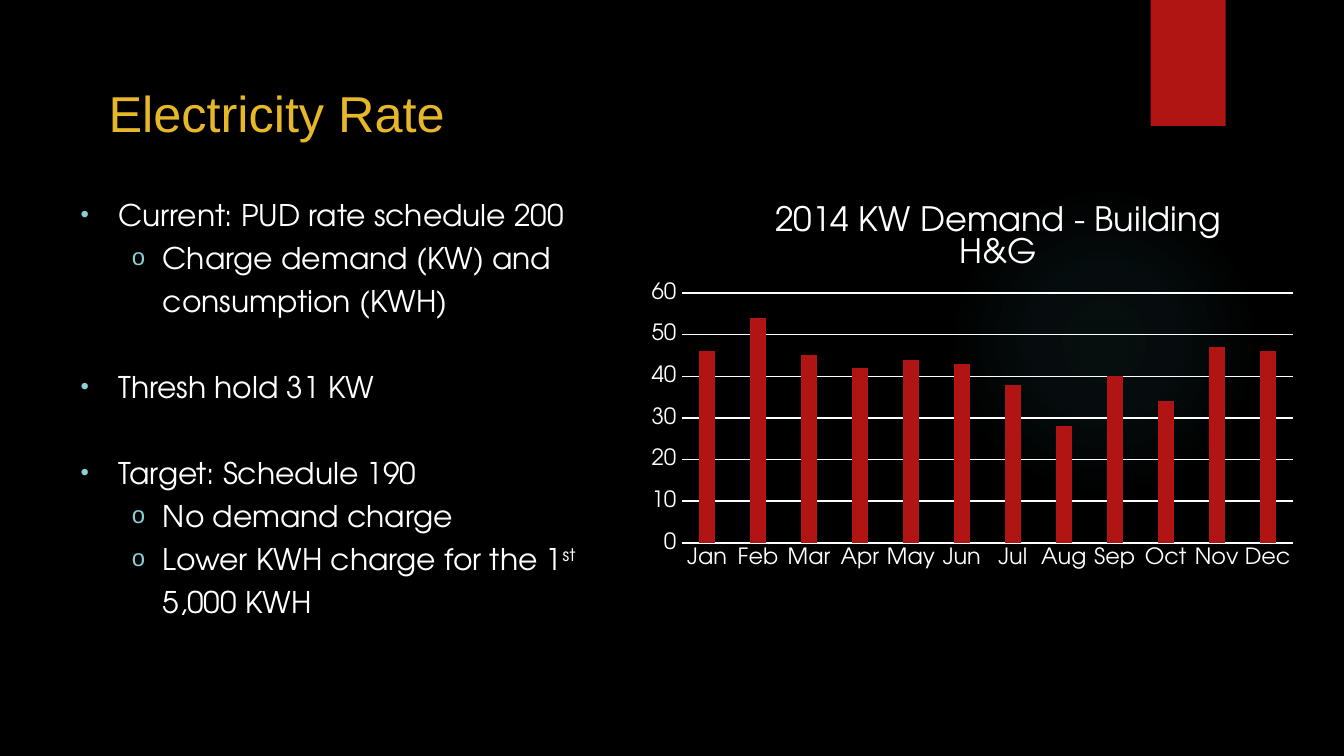
"""Build the Electricity Rate slide with its monthly demand chart."""
from lxml.etree import SubElement
from pptx import Presentation
from pptx.chart.data import CategoryChartData
from pptx.dml.color import RGBColor as RGB
from pptx.enum.chart import XL_CHART_TYPE as ChartType, XL_TICK_MARK as Tick
from pptx.enum.shapes import MSO_SHAPE as Preset
from pptx.enum.text import MSO_ANCHOR as Anchor, MSO_AUTO_SIZE as AutoSize, PP_ALIGN as Align
from pptx.oxml import parse_xml
from pptx.oxml.ns import nsdecls, qn
from pptx.util import Pt

TITLE = "Electricity Rate"
POINTS = [
    (0, False, ["Current: PUD rate schedule 200"]),
    (1, False, ["Charge demand (KW) and consumption (KWH)"]),
    (0, True, ["Thresh hold 31 KW"]),
    (0, True, ["Target: Schedule 190"]),
    (1, False, ["No demand charge"]),
    (1, False, ["Lower KWH charge for the 1", "st", " 5,000 KWH"]),
]
SUPERSCRIPT = "st"
CHART_TITLE = "2014 KW Demand - Building H&G"
DEMAND = {"Jan": 46, "Feb": 54, "Mar": 45, "Apr": 42, "May": 44, "Jun": 43,
          "Jul": 38, "Aug": 28, "Sep": 40, "Oct": 34, "Nov": 47, "Dec": 46}

THEME = {
    "background": RGB(0, 0, 0), "accent": RGB(0xB0, 0x15, 0x13),
    "heading": RGB(0xE6, 0xB7, 0x29), "text": RGB(255, 255, 255),
    "bullet": "8AD0D6", "glow": "50B9C1",
    "heading_font": "Arial", "body_font": "TeX Gyre Adventor",
    "heading_size": Pt(27), "body_size": Pt(16),
    "chart_title_size": Pt(18), "axis_size": Pt(12), "rule": Pt(0.75),
}
LEVELS = [{"marker": "•", "left": 20.25, "hang": -20.25},
          {"marker": "o", "left": 44, "hang": -16.5}]
GLOW_STOPS = [(0, 7), (36, 6), (69, 0)]
BOXES = {
    "glow": (508.3, 99.4, 166.3, 166.3), "ribbon": (616.4, 0, 40.3, 67.5),
    "title": (36, 16.6, 648, 67.7), "points": (36, 94.3, 296, 293),
    "chart": (340, 94.3, 360, 216),
}


def box(name):
    return [Pt(length) for length in BOXES[name]]


def apply(target, values):
    for name, value in values.items():
        setattr(target, name, value)


def style(font, size, color="text", face="body_font"):
    apply(font, {"name": THEME[face], "size": THEME[size], "bold": False})
    font.color.rgb = THEME[color]


def place(placeholder, name, anchor, indent=0):
    apply(placeholder, dict(zip(("left", "top", "width", "height"), box(name))))
    frame = placeholder.text_frame
    apply(frame, {"word_wrap": True, "auto_size": AutoSize.NONE, "vertical_anchor": anchor,
                  "margin_left": Pt(7.2 + indent), "margin_right": Pt(7.2),
                  "margin_top": Pt(7.2), "margin_bottom": Pt(7.2)})
    return frame


def add_backdrop(slide, preset, name, depth):
    shape = slide.shapes.add_shape(preset, *box(name))
    shape.shadow.inherit = False
    shape.line.fill.background()
    shape.fill.solid()
    shape.fill.fore_color.rgb = THEME["accent"]
    slide.shapes.element.insert(depth, shape.element)
    return shape


def fill_radial(shape):
    stops = "".join(
        f'<a:gs pos="{pos * 1000}"><a:srgbClr val="{THEME["glow"]}">'
        f'<a:alpha val="{alpha * 1000}"/></a:srgbClr></a:gs>' for pos, alpha in GLOW_STOPS)
    gradient = parse_xml(
        f'<a:gradFill {nsdecls("a")} rotWithShape="1"><a:gsLst>{stops}</a:gsLst>'
        '<a:path path="circle"><a:fillToRect l="50000" t="50000" r="50000" b="50000"/>'
        '</a:path></a:gradFill>')
    solid = shape.element.spPr.find(qn("a:solidFill"))
    solid.getparent().replace(solid, gradient)


def add_bullet(paragraph, marker, left, hang):
    properties = paragraph._p.get_or_add_pPr()
    properties.set("marL", str(Pt(left)))
    properties.set("indent", str(Pt(hang)))
    color = SubElement(properties, qn("a:buClr"))
    SubElement(color, qn("a:srgbClr"), val=THEME["bullet"])
    SubElement(properties, qn("a:buSzPct"), val="80000")
    SubElement(properties, qn("a:buChar"), char=marker)


def add_points(frame):
    for index, (level, new_group, pieces) in enumerate(POINTS):
        paragraph = frame.paragraphs[0] if index == 0 else frame.add_paragraph()
        add_bullet(paragraph, **LEVELS[level])
        apply(paragraph, {"level": level, "line_spacing": 1.2,
                          "space_before": Pt(23 if new_group else 0)})
        for piece in pieces:
            run = paragraph.add_run()
            run.text = piece
            style(run.font, "body_size")
            if piece == SUPERSCRIPT:
                run._r.get_or_add_rPr().set("baseline", "30000")


def set_layout(parent, index, **fractions):
    for old in parent.findall(qn("c:layout")):
        parent.remove(old)
    layout = parse_xml(f'<c:layout {nsdecls("c")}/>')
    manual = SubElement(layout, qn("c:manualLayout"))
    if "w" in fractions:
        SubElement(manual, qn("c:layoutTarget"), val="inner")
    for axis in "xy":
        SubElement(manual, qn(f"c:{axis}Mode"), val="edge")
    for name, value in fractions.items():
        SubElement(manual, qn(f"c:{name}"), val=str(value))
    parent.insert(index, layout)


def add_demand_chart(slide):
    data = CategoryChartData()
    data.categories = list(DEMAND)
    data.add_series("Series 1", list(DEMAND.values()))
    chart = slide.shapes.add_chart(ChartType.COLUMN_CLUSTERED, *box("chart"), data).chart
    style(chart.font, "axis_size")
    chart.has_legend = False
    heading = chart.chart_title.text_frame
    heading.text = CHART_TITLE
    style(heading.paragraphs[0].runs[0].font, "chart_title_size")
    set_layout(chart.chart_title._element, 1, x=0.2, y=0.05)
    set_layout(chart._chartSpace.chart.plotArea, 0, x=0.07, y=0.29, w=0.91, h=0.62)

    plot = chart.plots[0]
    apply(plot, {"gap_width": 219, "overlap": -27, "vary_by_categories": False})
    bars = plot.series[0].format.fill
    bars.solid()
    bars.fore_color.rgb = THEME["accent"]

    months, kilowatts = chart.category_axis, chart.value_axis
    for axis in (months, kilowatts):
        apply(axis, {"major_tick_mark": Tick.NONE, "minor_tick_mark": Tick.NONE})
        style(axis.tick_labels.font, "axis_size")
    apply(kilowatts, {"minimum_scale": 0, "maximum_scale": 60, "major_unit": 10,
                      "has_major_gridlines": True})
    kilowatts.format.line.fill.background()
    for line in (months.format.line, kilowatts.major_gridlines.format.line):
        line.color.rgb = THEME["text"]
        line.width = THEME["rule"]


def main():
    deck = Presentation()
    apply(deck, {"slide_width": Pt(720), "slide_height": Pt(405)})
    slide = deck.slides.add_slide(deck.slide_layouts[1])
    slide.background.fill.solid()
    slide.background.fill.fore_color.rgb = THEME["background"]

    fill_radial(add_backdrop(slide, Preset.OVAL, "glow", 2))
    add_backdrop(slide, Preset.RECTANGLE, "ribbon", 3)

    heading = place(slide.shapes.title, "title", Anchor.BOTTOM, indent=15)
    heading.text = TITLE
    apply(heading.paragraphs[0], {"alignment": Align.LEFT, "line_spacing": 0.9})
    style(heading.paragraphs[0].runs[0].font, "heading_size", "heading", "heading_font")

    add_points(place(slide.placeholders[1], "points", Anchor.TOP))
    add_demand_chart(slide)
    deck.save("out.pptx")


if __name__ == "__main__":
    main()
